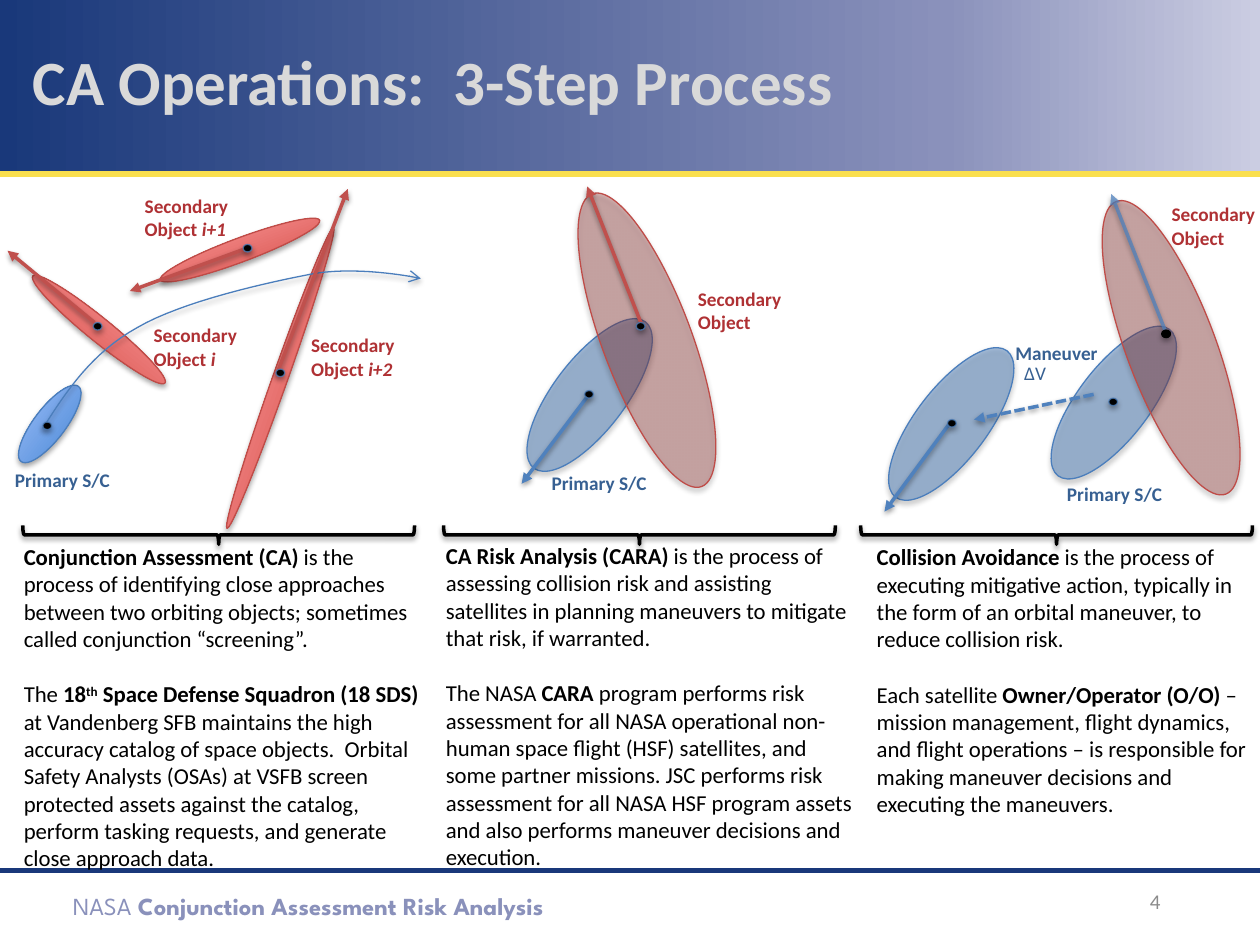
from lxml import etree
from pptx import Presentation
from pptx.dml.color import RGBColor
from pptx.enum.dml import MSO_LINE
from pptx.enum.shapes import MSO_CONNECTOR, MSO_SHAPE
from pptx.enum.text import MSO_ANCHOR, MSO_AUTO_SIZE, PP_ALIGN
from pptx.oxml.ns import qn
from pptx.util import Cm, Pt

OVAL, BRACE, RECTANGLE = MSO_SHAPE.OVAL, MSO_SHAPE.RIGHT_BRACE, MSO_SHAPE.RECTANGLE
STRAIGHT = MSO_CONNECTOR.STRAIGHT
SOLID, DASHED = MSO_LINE.SOLID, MSO_LINE.SQUARE_DOT
TOP, MIDDLE = MSO_ANCHOR.TOP, MSO_ANCHOR.MIDDLE
LEFT, RIGHT = PP_ALIGN.LEFT, PP_ALIGN.RIGHT
NO_AUTOFIT = MSO_AUTO_SIZE.NONE

BLACK = RGBColor(0x00, 0x00, 0x00)
NAVY = RGBColor(0x19, 0x38, 0x7A)
LAVENDER = RGBColor(0x8A, 0x91, 0xBB)
PALE = RGBColor(0xCB, 0xCD, 0xE2)
YELLOW = RGBColor(0xFA, 0xDF, 0x4E)
SILVER = RGBColor(0xD9, 0xD9, 0xD9)
GRAY = RGBColor(0x8C, 0x8C, 0x8C)
BLUE = RGBColor(0x4F, 0x81, 0xBD)
BLUE_EDGE = RGBColor(0x4B, 0x7E, 0xBC)
BLUE_TEXT = RGBColor(0x37, 0x60, 0x92)
BLUE_DARK = RGBColor(0x3F, 0x80, 0xCE)
BLUE_LIGHT = RGBColor(0xA4, 0xC4, 0xFF)
RED = RGBColor(0xC0, 0x50, 0x4D)
RED_EDGE = RGBColor(0xBF, 0x4C, 0x48)
RED_TEXT = RGBColor(0xAF, 0x31, 0x34)
RED_DARK = RGBColor(0xD1, 0x40, 0x3C)
RED_LIGHT = RGBColor(0xFF, 0xA6, 0xA5)
MAROON = RGBColor(0x95, 0x37, 0x35)

INCH = 2.54
TITLE = "CA Operations:  3-Step Process"
FOOTER = [("NASA", ""), (" Conjunction Assessment Risk Analysis", "b")]
COLUMNS = [
    ((0.09, 4.26, 3.41, 2.73), [
        [("Conjunction Assessment (CA)", "b"),
         (" is the process of identifying close approaches between two orbiting objects; "
          "sometimes called conjunction “screening”.", "")],
        [("The ", ""), ("18", "b"), ("th", "b^"), (" Space Defense Squadron (18 SDS) ", "b"),
         ("at Vandenberg SFB maintains the high accuracy catalog of space objects.  Orbital "
          "Safety Analysts (OSAs) at VSFB screen protected assets against the catalog, perform "
          "tasking requests, and generate close approach data.", "")]]),
    ((3.44, 4.25, 3.42, 2.73), [
        [("CA Risk Analysis (CARA) ", "b"),
         ("is the process of assessing collision risk and assisting satellites in planning "
          "maneuvers to mitigate that risk, if warranted.", "")],
        [("The NASA ", ""), ("CARA ", "b"),
         ("program performs risk assessment for all NASA operational non-human space flight "
          "(HSF) satellites, and some partner missions. JSC performs risk assessment for all "
          "NASA HSF program assets and also performs maneuver decisions and execution.", "")]]),
    ((6.86, 4.26, 3.27, 2.29), [
        [("Collision Avoidance ", "b"),
         ("is the process of executing mitigative action, typically in the form of an orbital "
          "maneuver, to reduce collision risk.", "")],
        [("Each satellite ", ""), ("Owner/Operator (O/O)", "b"),
         (" – mission management, flight dynamics, and flight operations – is responsible for "
          "making maneuver decisions and executing the maneuvers.", "")]]),
]
LABELS = [
    ((8.03, 2.82, 0.55, 0.29), BLUE_TEXT, [("∆V", "")]),
    ((7.96, 2.66, 1.44, 0.29), BLUE_TEXT, [("Maneuver", "b")]),
    ((2.37, 2.6, 0.98, 0.47), RED_TEXT, [("Secondary Object ", "b"), ("i+2", "bi")]),
    ((1.05, 1.49, 1.07, 0.47), RED_TEXT, [("Secondary Object ", "b"), ("i+1", "bi")]),
    ((1.12, 2.52, 0.92, 0.48), RED_TEXT, [("Secondary Object", "b"), (" i", "bi")]),
]
LABELS += [((x, y, 1.44, 0.29), BLUE_TEXT, [("Primary S/C", "b")])
           for x, y in [(0.02, 3.67), (4.28, 3.69), (8.37, 3.78)]]
LABELS += [((x, y, 0.93, 0.47), RED_TEXT, [("Secondary Object", "b")])
           for x, y in [(5.44, 2.23), (9.2, 1.56)]]

RED_GLOSS = [(0, RED_DARK), (100, RED_LIGHT)]
BLUE_GLOSS = [(0, BLUE_DARK), (100, BLUE_LIGHT)]
GLOSSY_ELLIPSES = [
    ((0.02, 3.24, 0.75, 0.25), 307.3, BLUE_GLOSS, BLUE_EDGE),
    ((1.23, 1.89, 1.35, 0.19), 339.5, RED_GLOSS, RED_EDGE),
    ((0.11, 2.52, 1.35, 0.19), 39, RED_GLOSS, RED_EDGE),
    ((0.96, 2.94, 2.53, 0.12), 289.5, RED_GLOSS, RED_EDGE),
]
PRIMARY = (1.46, 0.57), 307.3, BLUE, 48, BLUE_EDGE
SECONDARY = (0.71, 2.48), 339.5, MAROON, 37, RED_EDGE
CLEAR_ELLIPSES = [
    ((3.95, 2.85), PRIMARY), ((4.78, 1.46), SECONDARY),
    ((8.11, 2.91), PRIMARY), ((8.94, 1.52), SECONDARY),
    ((6.82, 3.08), PRIMARY),
]
ARROWS = [
    ((0.75, 2.56), (0.06, 1.99), RED, SOLID, 100),
    ((1.96, 1.97), (1.03, 2.31), RED, SOLID, 100),
    ((2.2, 2.96), (2.76, 1.5), RED, SOLID, 100),
    ((5.09, 2.57), (4.66, 1.48), RED, SOLID, 100),
    ((4.66, 3.15), (4.14, 3.84), BLUE, SOLID, 100),
    ((9.25, 2.63), (8.82, 1.54), BLUE, SOLID, 74),
    ((8.68, 3.13), (7.73, 3.33), BLUE, DASHED, 100),
    ((7.53, 3.37), (7.02, 4.06), BLUE, SOLID, 100),
]
DOTS = [(0.34, 3.35), (1.93, 1.94), (0.74, 2.56), (2.19, 2.93), (5.05, 2.56),
        (4.64, 3.1), (8.8, 3.16), (7.52, 3.33)]
BLACK_DOT = (9.22, 2.62)
BRACES = [1.66, 5.0, 8.31]
ORBIT = [(0.34, 3.4), (0.53, 3.1), (0.73, 2.8), (1.09, 2.6), (1.45, 2.39), (2.13, 2.24),
         (2.5, 2.17), (2.88, 2.11), (3.34, 2.21), (3.34, 2.21)]
CURVE_STEPS = 16


def lengths(values):
    return [Cm(value * INCH) for value in values]


def set_opacity(parent, percent):
    color = next(parent.iter(qn("a:srgbClr")))
    etree.SubElement(color, qn("a:alpha")).set("val", str(percent * 1000))


def set_gradient(shape, stops, angle):
    shape.fill.gradient()
    shape.fill.gradient_angle = angle
    stop_list = next(shape._element.spPr.iter(qn("a:gsLst")))
    for stop in list(stop_list):
        stop_list.remove(stop)
    for position, color in stops:
        stop = etree.SubElement(stop_list, qn("a:gs"), pos=str(position * 1000))
        etree.SubElement(stop, qn("a:srgbClr"), val=str(color))


def set_line(shape, color, width, opacity=100, dash=SOLID, head=None):
    shape.line.color.rgb = color
    shape.line.width = Pt(width)
    shape.line.dash_style = dash
    outline = shape._element.spPr.find(qn("a:ln"))
    if opacity < 100:
        set_opacity(outline, opacity)
    if head:
        etree.SubElement(outline, qn("a:tailEnd"), type=head)


def set_shadow(shape, opacity=None, distance=1.8):
    effects = etree.SubElement(shape._element.spPr, qn("a:effectLst"))
    if opacity:
        shadow = etree.SubElement(effects, qn("a:outerShdw"), blurRad=str(Pt(3.1)),
                                  dist=str(Pt(distance)), dir="5400000", rotWithShape="0")
        etree.SubElement(shadow, qn("a:srgbClr"), val=str(BLACK))
        set_opacity(shadow, opacity)


def add_ellipse(page, place, turn, fill, edge, opacity=100, edge_opacity=100):
    ellipse = page.shapes.add_shape(OVAL, *lengths(place))
    ellipse.rotation = turn
    if isinstance(fill, list):
        set_gradient(ellipse, fill, 90)
    else:
        ellipse.fill.solid()
        ellipse.fill.fore_color.rgb = fill
        if opacity < 100:
            set_opacity(ellipse._element.spPr, opacity)
    set_line(ellipse, edge, 0.75, edge_opacity)
    set_shadow(ellipse, 35)


def add_line(page, start, end, color, width, **style):
    line = page.shapes.add_connector(STRAIGHT, *lengths(start + end))
    set_line(line, color, width, **style)
    return line


def write(box, paragraphs, size, color, font="Calibri", gap=0, align=LEFT, anchor=TOP):
    frame = box.text_frame
    for name, value in {"word_wrap": True, "auto_size": NO_AUTOFIT,
                        "vertical_anchor": anchor}.items():
        setattr(frame, name, value)
    for index, spans in enumerate(paragraphs):
        para = frame.add_paragraph() if index else frame.paragraphs[0]
        para.alignment = align
        para.space_before = Pt(gap if index else 0)
        for text, marks in spans:
            span = para.add_run()
            span.text = text
            for name, value in {"name": font, "size": Pt(size), "bold": "b" in marks,
                                "italic": "i" in marks}.items():
                setattr(span.font, name, value)
            span.font.color.rgb = color
            if "^" in marks:
                span._r.get_or_add_rPr().set("baseline", "30000")


def add_text(page, place, paragraphs, size, color, **style):
    write(page.shapes.add_textbox(*lengths(place)), paragraphs, size, color, **style)


def add_orbit(page):
    points = [ORBIT[0]]
    for first in range(0, len(ORBIT) - 1, 3):
        curve = ORBIT[first:first + 4]
        for step in range(1, CURVE_STEPS + 1):
            t = step / CURVE_STEPS
            weights = ((1 - t) ** 3, 3 * t * (1 - t) ** 2, 3 * t ** 2 * (1 - t), t ** 3)
            points.append(tuple(sum(w * p[axis] for w, p in zip(weights, curve))
                                for axis in (0, 1)))
    builder = page.shapes.build_freeform(*lengths(points[0]))
    builder.add_line_segments([lengths(point) for point in points[1:]], close=False)
    orbit = builder.convert_to_shape()
    orbit.fill.background()
    set_line(orbit, BLUE_EDGE, 0.75, head="arrow")
    set_shadow(orbit, 35)


def add_frame(page):
    header = page.shapes.add_shape(RECTANGLE, *lengths((0, 0, 10, 1.39)))
    set_gradient(header, [(0, NAVY), (75, LAVENDER), (100, PALE)], 0)
    header.line.fill.background()
    set_shadow(header)
    add_text(page, (0.48, 7.02, 4.35, 0.34), [FOOTER], 14, LAVENDER, font="League Spartan")
    for y, color, width in [(6.91, NAVY, 3), (1.38, YELLOW, 3.5)]:
        set_shadow(add_line(page, (0, y), (10, y), color, width))
    title = page.shapes.title
    title.left, title.top, title.width, title.height = lengths((0.16, 0.1, 9.61, 1.07))
    write(title, [[(TITLE, "b")]], 36, SILVER, anchor=MIDDLE)
    page.shapes._spTree.append(title._element)
    add_text(page, (7.06, 6.95, 2.25, 0.4), [[("4", "")]], 12, GRAY, align=RIGHT, anchor=MIDDLE)


def add_diagrams(page):
    for place, turn, fill, edge in GLOSSY_ELLIPSES:
        add_ellipse(page, place, turn, fill, edge)
    add_orbit(page)
    for corner, (size, turn, fill, opacity, edge) in CLEAR_ELLIPSES:
        add_ellipse(page, corner + size, turn, fill, edge, opacity)
    for start, end, color, dash, opacity in ARROWS:
        arrow = add_line(page, start, end, color, 2, opacity=opacity, dash=dash, head="triangle")
        set_shadow(arrow, 38, 1.6)
    for x in BRACES:
        brace = page.shapes.add_shape(BRACE, *lengths((x, 2.69, 0.15, 3.11)))
        brace.rotation = 90
        brace.fill.background()
        set_line(brace, BLACK, 2)
        set_shadow(brace, 38, 1.6)


def main():
    deck = Presentation()
    deck.slide_width, deck.slide_height = lengths((10, 7.5))
    page = deck.slides.add_slide(deck.slide_layouts[5])
    add_frame(page)
    add_diagrams(page)
    for place, paragraphs in COLUMNS:
        add_text(page, place, paragraphs, 13, BLACK, gap=16)
    for place, color, spans in LABELS:
        add_text(page, place, [spans], 11, color)
    for corner in DOTS:
        add_ellipse(page, corner + (0.07, 0.06), 0, BLACK, BLUE, edge_opacity=74)
    add_ellipse(page, BLACK_DOT + (0.07, 0.06), 0, BLACK, BLACK)
    deck.save("out.pptx")


if __name__ == "__main__":
    main()
